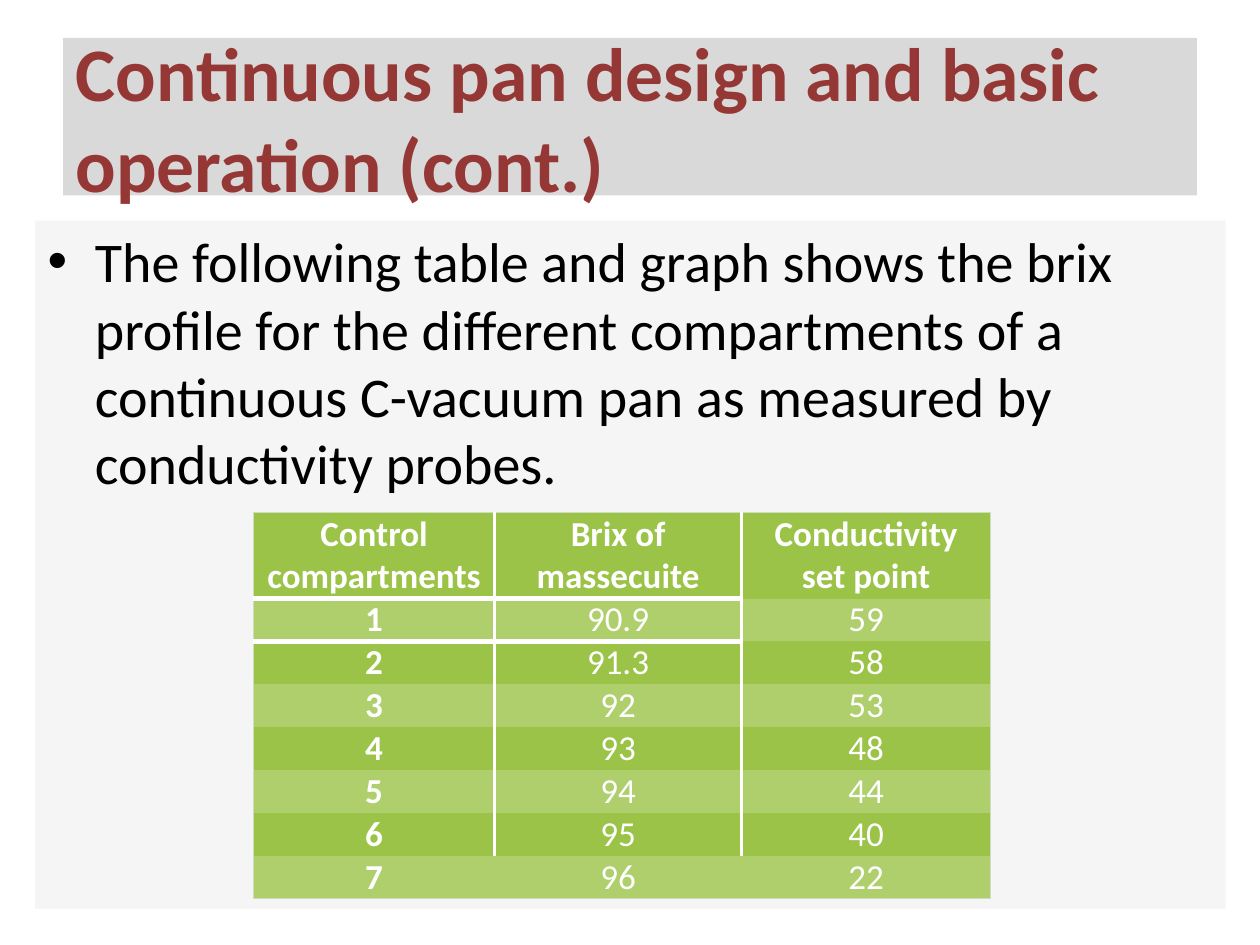
from lxml.etree import SubElement
from pptx import Presentation
from pptx.dml.color import RGBColor
from pptx.enum.text import MSO_ANCHOR, MSO_AUTO_SIZE, PP_ALIGN
from pptx.oxml import parse_xml
from pptx.oxml.ns import nsdecls, qn
from pptx.util import Pt

COLORS = {
    "title": "953735", "bar": "D9D9D9", "panel": "F2F2F2",
    "text": "000000", "white": "FFFFFF", "edge": "D0DCBF",
    "green": "9BC348", "pale": "AFCF6D",
}
NO_GRID = "{2D5ABB26-0587-4C30-8999-92F81FD0307C}"
WIDTHS = (137.5, 141.5, 142)
ROWS = [
    ("Control compartments", "Brix of massecuite", "Conductivity set point"),
    ("1", "90.9", "59"),
    ("2", "91.3", "58"),
    ("3", "92", "53"),
    ("4", "93", "48"),
    ("5", "94", "44"),
    ("6", "95", "40"),
    ("7", "96", "22"),
]


def paint(item, name):
    item.fill.solid()
    item.fill.fore_color.rgb = RGBColor.from_string(COLORS[name])


def style(frame, size, name, bold, align):
    para = frame.paragraphs[0]
    para.alignment = align
    para.space_before = Pt(0)
    font = para.runs[0].font
    font.name, font.size, font.bold = "Calibri", Pt(size), bold
    font.color.rgb = RGBColor.from_string(COLORS[name])


def fill_holder(holder, box, text, fill, size, color, bold=False):
    holder.left, holder.top, holder.width, holder.height = map(Pt, box)
    paint(holder, fill)
    frame = holder.text_frame
    frame.text = text
    frame.auto_size = MSO_AUTO_SIZE.NONE
    style(frame, size, color, bold, PP_ALIGN.LEFT)


def fade(shape, percent):
    """Set the opacity of a solid fill."""
    color = shape.fill._xPr.find(qn("a:solidFill"))[0]
    SubElement(color, qn("a:alpha")).set("val", str(percent * 1000))


def add_edges(cell, edges):
    """Draw cell borders; edges maps a side (L, R, T, B) to colour and width."""
    props = cell._tc.get_or_add_tcPr()
    sides = [side for side in "LRTB" if side in edges]
    for spot, side in enumerate(sides):
        name, width = edges[side]
        props.insert(spot, parse_xml(
            f'<a:ln{side} {nsdecls("a")} w="{Pt(width)}"><a:solidFill>'
            f'<a:srgbClr val="{COLORS[name]}"/></a:solidFill></a:ln{side}>'))


def find_edges(row, col):
    thin, rule, bar = ("edge", 0.75), ("white", 2), ("white", 3)
    last = len(ROWS) - 1
    edges = {}
    if row == 0:
        edges["T"] = thin
    if row == last:
        edges["B"] = thin
    if col == 0:
        edges["L"] = thin
    if col == 2:
        edges["R"] = thin
    if row < last and col < 2:
        edges["R" if col == 0 else "L"] = rule
    if row < 2 and col < 2:
        edges["B" if row == 0 else "T"] = bar
    return edges


def add_brix(slide):
    frame = slide.shapes.add_table(
        len(ROWS), len(WIDTHS), Pt(145), Pt(293), Pt(sum(WIDTHS)), Pt(220))
    table = frame.table
    table._tbl.tblPr.find(qn("a:tableStyleId")).text = NO_GRID
    for column, width in zip(table.columns, WIDTHS):
        column.width = Pt(width)
    for r, values in enumerate(ROWS):
        table.rows[r].height = Pt(24.5 if r else 48.8)
        for c, value in enumerate(values):
            cell = table.cell(r, c)
            cell.margin_left = cell.margin_right = Pt(5)
            cell.margin_top = cell.margin_bottom = Pt(0)
            cell.text = value
            style(cell.text_frame, 20, "white", r == 0 or c == 0,
                  PP_ALIGN.CENTER)
            paint(cell, "pale" if r % 2 else "green")
            add_edges(cell, find_edges(r, c))


def main():
    deck = Presentation()
    deck.slide_width, deck.slide_height = Pt(720), Pt(540)
    slide = deck.slides.add_slide(deck.slide_layouts[1])
    title, body = slide.placeholders
    fill_holder(title, (36, 21.6, 648, 90),
                "Continuous pan design and basic operation (cont.)",
                "bar", 43.2, "title", True)
    title.text_frame.vertical_anchor = MSO_ANCHOR.MIDDLE
    fill_holder(body, (20, 126, 680.4, 393.4),
                "The following table and graph shows the brix profile for the "
                "different compartments of a continuous C-vacuum pan as "
                "measured by conductivity probes.",
                "panel", 32, "text")
    fade(body, 75)
    add_brix(slide)
    deck.save("out.pptx")


if __name__ == "__main__":
    main()
